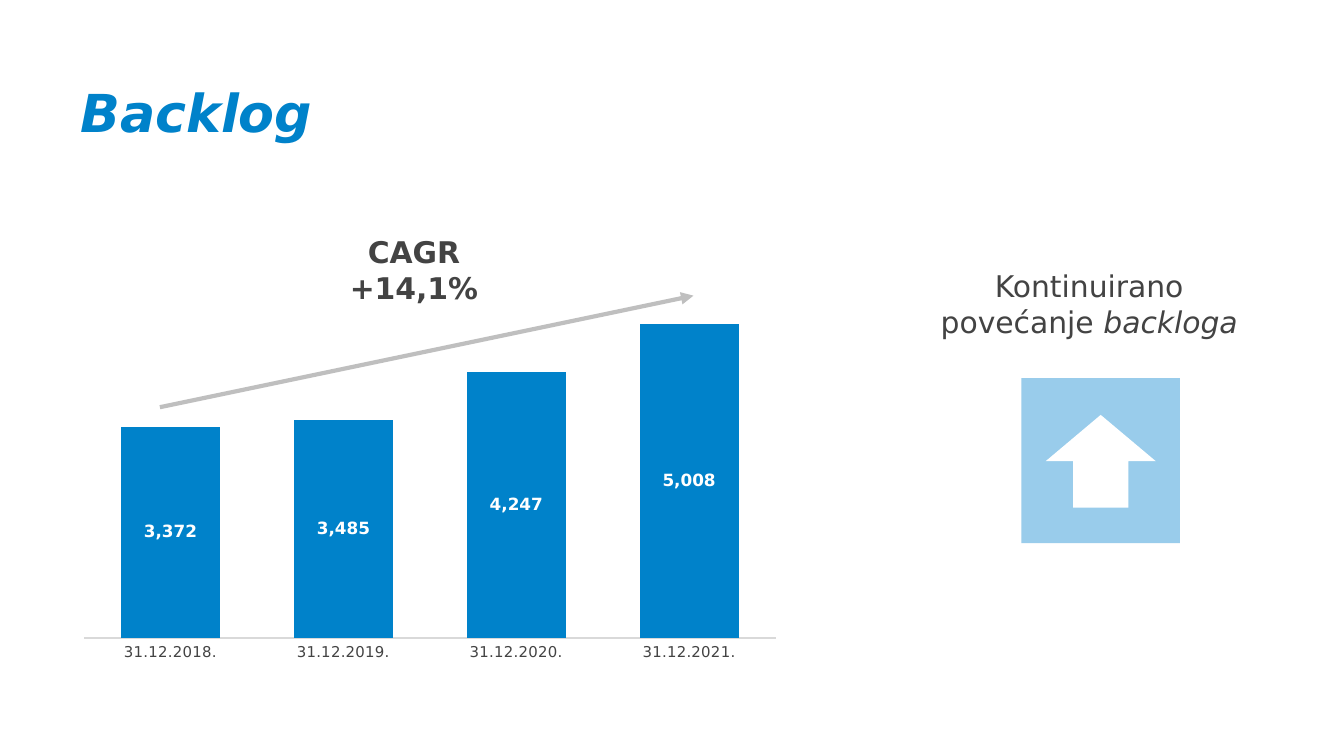
import pptx
import pptx.chart.data
import pptx.dml.color
import pptx.enum.chart
import pptx.enum.shapes
import pptx.enum.text
import pptx.oxml.ns
import pptx.util
from lxml import etree

RGB = pptx.dml.color.RGBColor
BLUE = RGB(0x00, 0x82, 0xCA)
LIGHT_BLUE = RGB(0x99, 0xCC, 0xEB)
DARK = RGB(0x43, 0x43, 0x43)
GREY = RGB(0xBF, 0xBF, 0xBF)
PALE_GREY = RGB(0xD9, 0xD9, 0xD9)
WHITE = RGB(0xFF, 0xFF, 0xFF)
BLACK = RGB(0x00, 0x00, 0x00)
FONT = "DejaVu Sans"
COLUMNS = 100
SHAPE = pptx.enum.shapes.MSO_SHAPE
ALIGN = pptx.enum.text.PP_ALIGN
qn = pptx.oxml.ns.qn


class SlideBuilder:
    """Draws styled elements on one slide, measured in square cells, 100 to the width."""

    def __init__(self, prs):
        self.cell = prs.slide_width / COLUMNS
        self.s = prs.slides.add_slide(prs.slide_layouts[6])

    def grid(self, *cells):
        return [pptx.util.Emu(round(c * self.cell)) for c in cells]

    def style(self, font, size, color, bold=False, italic=False):
        font.name = FONT
        font.size = pptx.util.Pt(size)
        font.color.rgb = color
        font.bold = bold
        font.italic = italic

    def text(self, box, paragraphs, size, color, bold=False, align=ALIGN.CENTER, inset=0.5):
        tf = self.s.shapes.add_textbox(*self.grid(*box)).text_frame
        tf.word_wrap = True
        tf.margin_top, tf.margin_bottom = self.grid(inset, inset)
        for i, runs in enumerate(paragraphs):
            p = tf.add_paragraph() if i else tf.paragraphs[0]
            p.alignment = align
            for words, italic in runs:
                r = p.add_run()
                r.text = words
                self.style(r.font, size, color, bold, italic)

    def shape(self, kind, box, color):
        sp = self.s.shapes.add_shape(kind, *self.grid(*box))
        sp.shadow.inherit = False
        sp.fill.solid()
        sp.fill.fore_color.rgb = color
        sp.line.fill.background()

    def arrow(self, start, end, color, width):
        connector = self.s.shapes.add_connector(
            pptx.enum.shapes.MSO_CONNECTOR.STRAIGHT, *self.grid(*start, *end))
        connector.line.color.rgb = color
        connector.line.width = pptx.util.Pt(width)
        properties = connector.element.spPr
        etree.SubElement(properties.find(qn("a:ln")), qn("a:tailEnd"), type="triangle")
        etree.SubElement(properties, qn("a:effectLst"))

    def column_chart(self, box, values, plot_area, top):
        data = pptx.chart.data.CategoryChartData(number_format="#,##0")
        data.categories = list(values)
        data.add_series("Series 1", list(values.values()))
        enums = pptx.enum.chart
        chart = self.s.shapes.add_chart(
            enums.XL_CHART_TYPE.COLUMN_CLUSTERED, *self.grid(*box), data).chart
        chart.has_legend = False
        chart.has_title = False
        self.style(chart.font, 10, BLACK)

        axis = chart.category_axis
        axis.major_tick_mark = enums.XL_TICK_MARK.NONE
        axis.format.line.color.rgb = PALE_GREY
        axis.format.line.width = pptx.util.Pt(0.75)
        self.style(axis.tick_labels.font, 8, DARK)
        chart.value_axis.minimum_scale = 0
        chart.value_axis.maximum_scale = top
        chart.value_axis.has_major_gridlines = False
        chart.value_axis.visible = False

        plot = chart.plots[0]
        plot.vary_by_categories = False
        plot.gap_width = 75
        plot.overlap = -27
        series = plot.series[0]
        series.format.fill.solid()
        series.format.fill.fore_color.rgb = BLUE
        labels = series.data_labels
        labels.show_value = True
        labels.number_format = "#,##0"
        labels.number_format_is_linked = False
        labels.position = enums.XL_LABEL_POSITION.CENTER
        self.style(labels.font, 9, WHITE, bold=True)
        self.place_plot(chart, plot_area)

    def place_plot(self, chart, area):
        plot_area = chart.element.find(".//" + qn("c:plotArea"))
        for old in plot_area.findall(qn("c:layout")):
            plot_area.remove(old)
        layout = plot_area.makeelement(qn("c:layout"))
        plot_area.insert(0, layout)
        manual = etree.SubElement(layout, qn("c:manualLayout"))
        settings = [("layoutTarget", "inner"), ("xMode", "edge"), ("yMode", "edge")]
        settings += zip("xywh", map(str, area))
        for tag, value in settings:
            etree.SubElement(manual, qn("c:" + tag), val=value)


def main():
    prs = pptx.Presentation()
    prs.slide_width = pptx.util.Inches(10)
    prs.slide_height = prs.slide_width * 9 // 16
    page = SlideBuilder(prs)

    page.text((5, 5, 57.3, 12.1), [[("Backlog", True)]], 28, BLUE,
              bold=True, align=ALIGN.LEFT, inset=1)
    page.text((68.3, 19.45, 25.5, 6.4),
              [[("Kontinuirano povećanje ", False), ("backloga", True)]], 16, DARK)
    page.shape(SHAPE.RECTANGLE, (76, 28.13, 11.8, 12.3), LIGHT_BLUE)
    page.shape(SHAPE.UP_ARROW, (77.8, 30.87, 8.2, 6.9), WHITE)
    backlog = {"31.12.2018.": 3372, "31.12.2019.": 3485,
               "31.12.2020.": 4247, "31.12.2021.": 5008}
    page.column_chart((6.2, 17.2, 54.8, 32.9), backlog, (0, 0.07, 0.94, 0.85), 6000)
    page.arrow((11.9, 30.3), (51.6, 22), GREY, 2.25)
    page.text((22.4, 16.9, 16.8, 6.4), [[("CAGR", False)], [("+14,1%", False)]],
              16, DARK, bold=True)
    prs.save("out.pptx")


if __name__ == "__main__":
    main()
